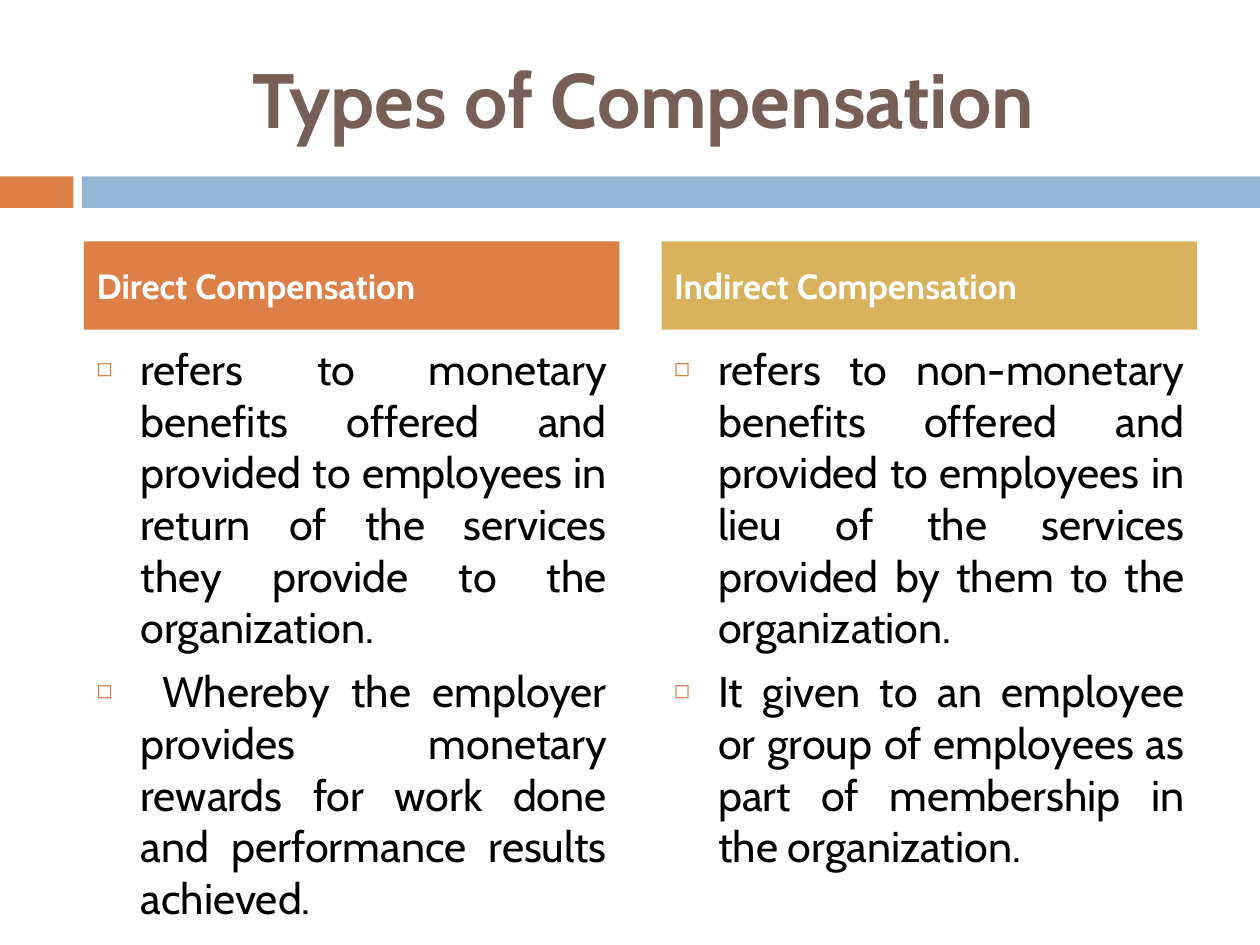
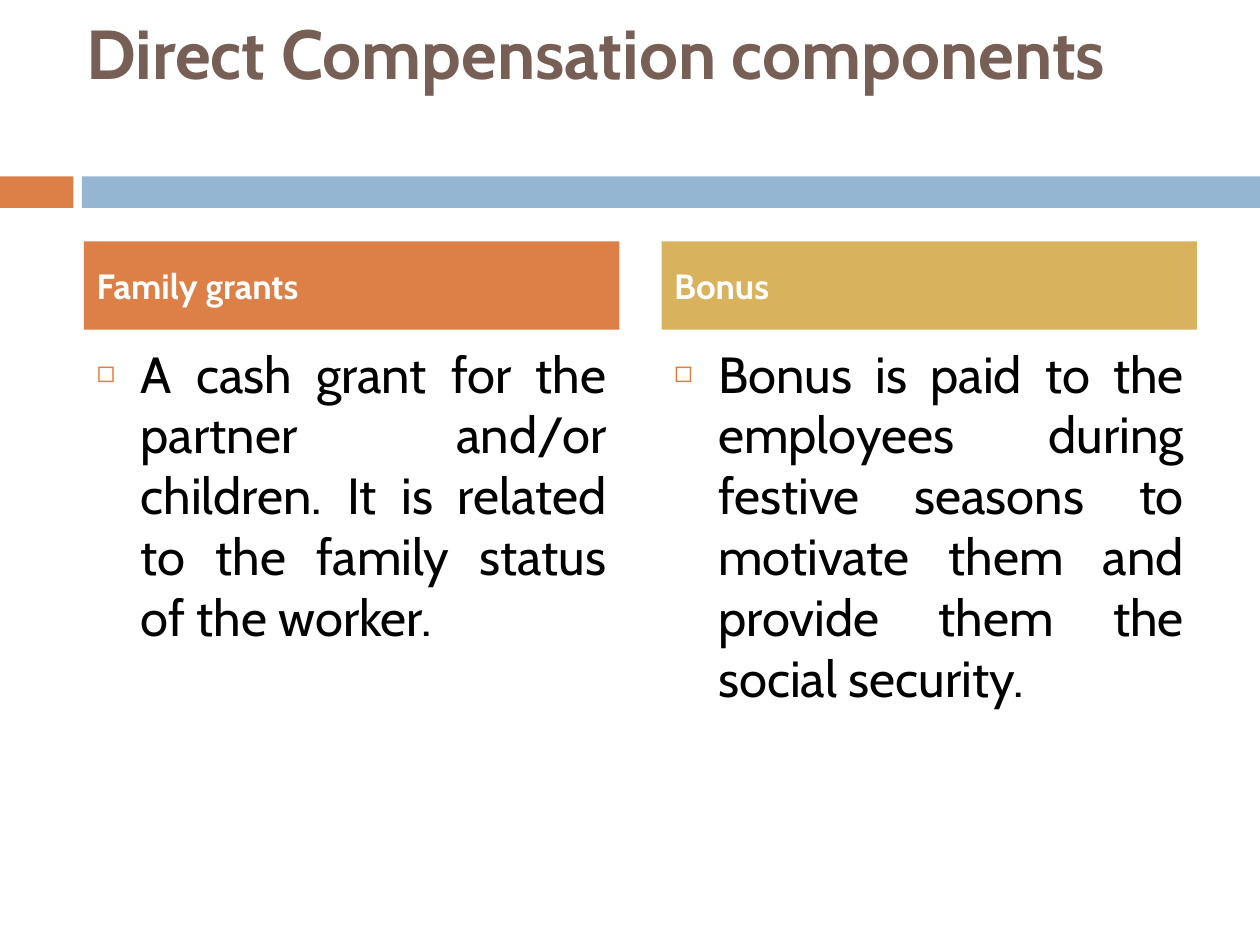
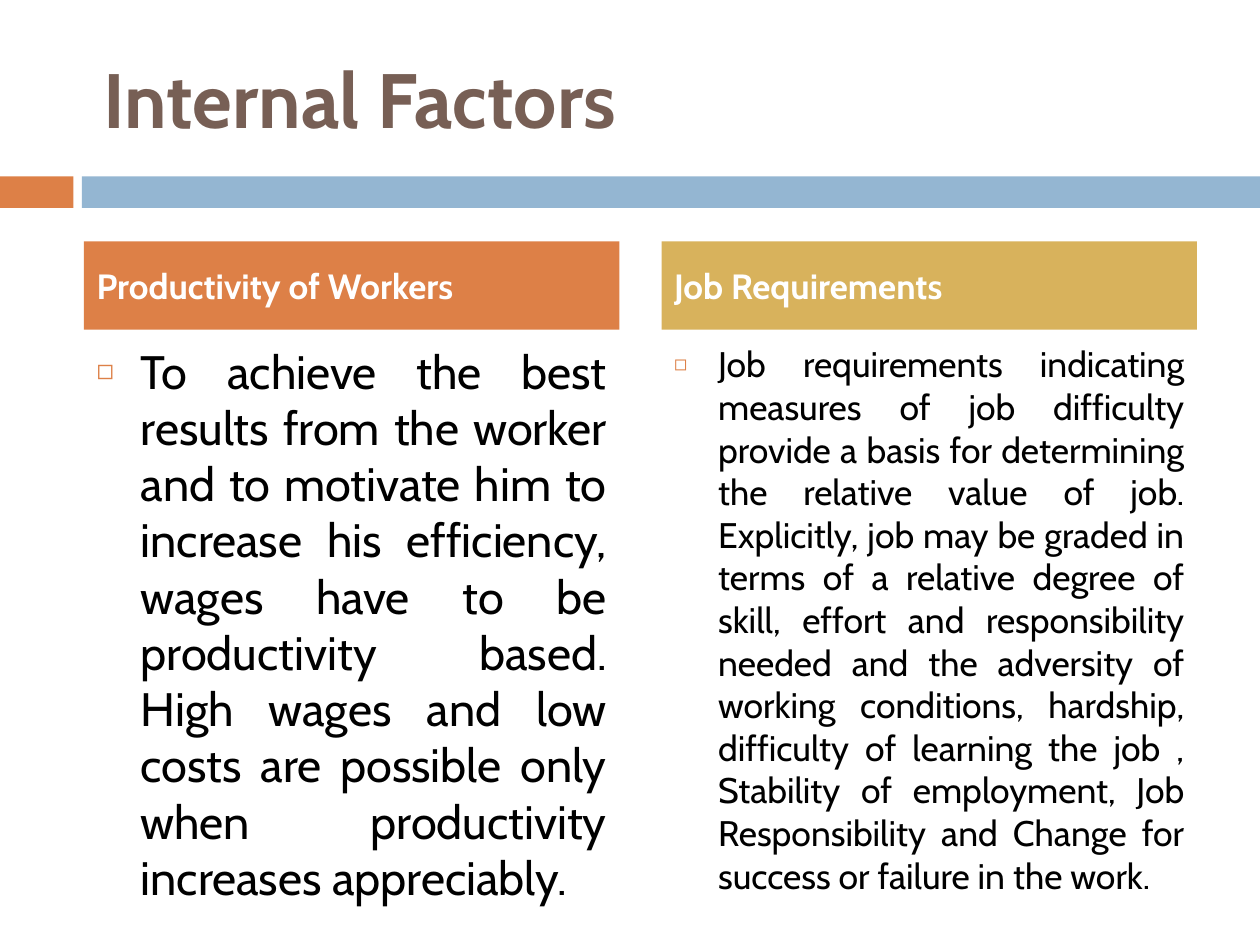
from lxml.etree import SubElement
from pptx import Presentation
from pptx.dml.color import RGBColor
from pptx.enum.shapes import MSO_SHAPE
from pptx.enum.text import MSO_ANCHOR, MSO_AUTO_SIZE, PP_ALIGN
from pptx.oxml.ns import qn
from pptx.util import Pt

ORANGE = RGBColor(0xDD, 0x80, 0x47)
BLUE = RGBColor(0x94, 0xB6, 0xD2)
GOLD = RGBColor(0xD8, 0xB2, 0x5C)
BROWN = RGBColor(0x77, 0x5F, 0x55)
BLACK = RGBColor(0, 0, 0)
WHITE = RGBColor(0xFF, 0xFF, 0xFF)

FONT = "Cabin"
COMPARISON_LAYOUT = 4
COLUMN_LEFTS = (48, 378)
COLUMN_WIDTH = 306
COLUMN_COLORS = (ORANGE, GOLD)
BULLET_INDENT = 25.2

SLIDES = [
    {
        "title": "Types of Compensation",
        "title_format": {"size": 44, "align": PP_ALIGN.CENTER},
        "title_inset": 17,
        "columns": [
            ("Direct Compensation", 24.6, [
                "refers to monetary benefits offered and provided to employees in "
                "return of the services they provide to the organization.",
                " Whereby the employer provides monetary rewards for work done and "
                "performance results achieved.",
            ]),
            ("Indirect Compensation", 24.6, [
                "refers to non-monetary benefits offered and provided to employees "
                "in lieu of the services provided by them to the organization.",
                "It given to an employee or group of employees as part of "
                "membership in the organization.",
            ]),
        ],
    },
    {
        "title": "Direct Compensation components\v",
        "title_format": {"size": 39.6},
        "title_inset": 7.2,
        "columns": [
            ("Family grants", 29, [
                "A cash grant for the partner and/or children. It is related to "
                "the family status of the worker.",
            ]),
            ("Bonus", 29, [
                "Bonus is paid to the employees during festive seasons to motivate "
                "them and provide them the social security.",
            ]),
        ],
    },
    {
        "title": "Internal Factors",
        "title_format": {"size": 44},
        "title_inset": 17,
        "columns": [
            ("Productivity of Workers", 26.8, [
                "To achieve the best results from the worker and to motivate him "
                "to increase his efficiency, wages have to be productivity based. "
                "High wages and low costs are possible only when productivity "
                "increases appreciably.",
            ]),
            ("Job Requirements", 20.3, [
                "Job requirements indicating measures of job difficulty provide a "
                "basis for determining the relative value of job. Explicitly, job "
                "may be graded in terms of a relative degree of skill, effort and "
                "responsibility needed and the adversity of working conditions, "
                "hardship, difficulty of learning the job , Stability of "
                "employment, Job Responsibility and Change for success or failure "
                "in the work.",
            ]),
        ],
    },
]


def place(shape, left, top, width, height):
    """Move and size a shape, in points."""
    shape.left, shape.top = Pt(left), Pt(top)
    shape.width, shape.height = Pt(width), Pt(height)


def add_bullet(para):
    """Give a paragraph a small orange square and a hanging indent."""
    properties = para._p.get_or_add_pPr()
    properties.set("marL", str(Pt(BULLET_INDENT)))
    properties.set("indent", str(-Pt(BULLET_INDENT)))
    color = SubElement(properties, qn("a:buClr"))
    SubElement(color, qn("a:srgbClr"), val=str(ORANGE))
    SubElement(properties, qn("a:buSzPct"), val="60000")
    SubElement(properties, qn("a:buChar"), char="◻")


def write(box, texts, size, color, bold=False, align=PP_ALIGN.LEFT,
          anchor=MSO_ANCHOR.MIDDLE, bullet=False):
    """Fill a box with formatted paragraphs."""
    frame = box.text_frame
    frame.word_wrap = True
    frame.auto_size = MSO_AUTO_SIZE.NONE
    frame.vertical_anchor = anchor
    for index, text in enumerate(texts):
        para = frame.add_paragraph() if index else frame.paragraphs[0]
        para.text = text
        if bullet:
            add_bullet(para)
        para.alignment = align
        para.space_before = Pt(7 if index else 0)
        for span in para.runs:
            span.font.name = FONT
            span.font.size = Pt(size)
            span.font.bold = bold
            span.font.color.rgb = color


def add_band(page, left, width, color):
    """Draw one part of the stripe under the title."""
    band = page.shapes.add_shape(
        MSO_SHAPE.RECTANGLE, Pt(left), Pt(100.8), Pt(width), Pt(18))
    band.shadow.inherit = False
    band.fill.solid()
    band.fill.fore_color.rgb = color
    band.line.fill.background()


def fill_title(page, text, inset, text_format):
    """Place and write the slide title."""
    title = page.shapes.title
    place(title, 42, 21.6, 642, 68.4)
    write(title, [text], color=BROWN, bold=True, **text_format)
    title.text_frame.margin_left = Pt(inset)


def fill_column(page, index, heading_text, size, points):
    """Place and write a coloured heading with its bulleted list."""
    heading = page.placeholders[2 * index + 1]
    body = page.placeholders[2 * index + 2]
    left = COLUMN_LEFTS[index]
    place(heading, left, 138, COLUMN_WIDTH, 50.4)
    heading.fill.solid()
    heading.fill.fore_color.rgb = COLUMN_COLORS[index]
    write(heading, [heading_text], size=20, color=WHITE, bold=True)
    place(body, left, 192, COLUMN_WIDTH, 282)
    write(body, points, size=size, color=BLACK, align=PP_ALIGN.JUSTIFY,
          anchor=MSO_ANCHOR.TOP, bullet=True)


def main():
    """Build the deck and save it."""
    deck = Presentation()
    deck.slide_width, deck.slide_height = Pt(720), Pt(540)
    for content in SLIDES:
        page = deck.slides.add_slide(deck.slide_layouts[COMPARISON_LAYOUT])
        add_band(page, 0, 42, ORANGE)
        add_band(page, 46.8, 673.2, BLUE)
        fill_title(page, content["title"], content["title_inset"],
                   content["title_format"])
        for index, column in enumerate(content["columns"]):
            fill_column(page, index, *column)
    deck.save("out.pptx")


if __name__ == "__main__":
    main()
